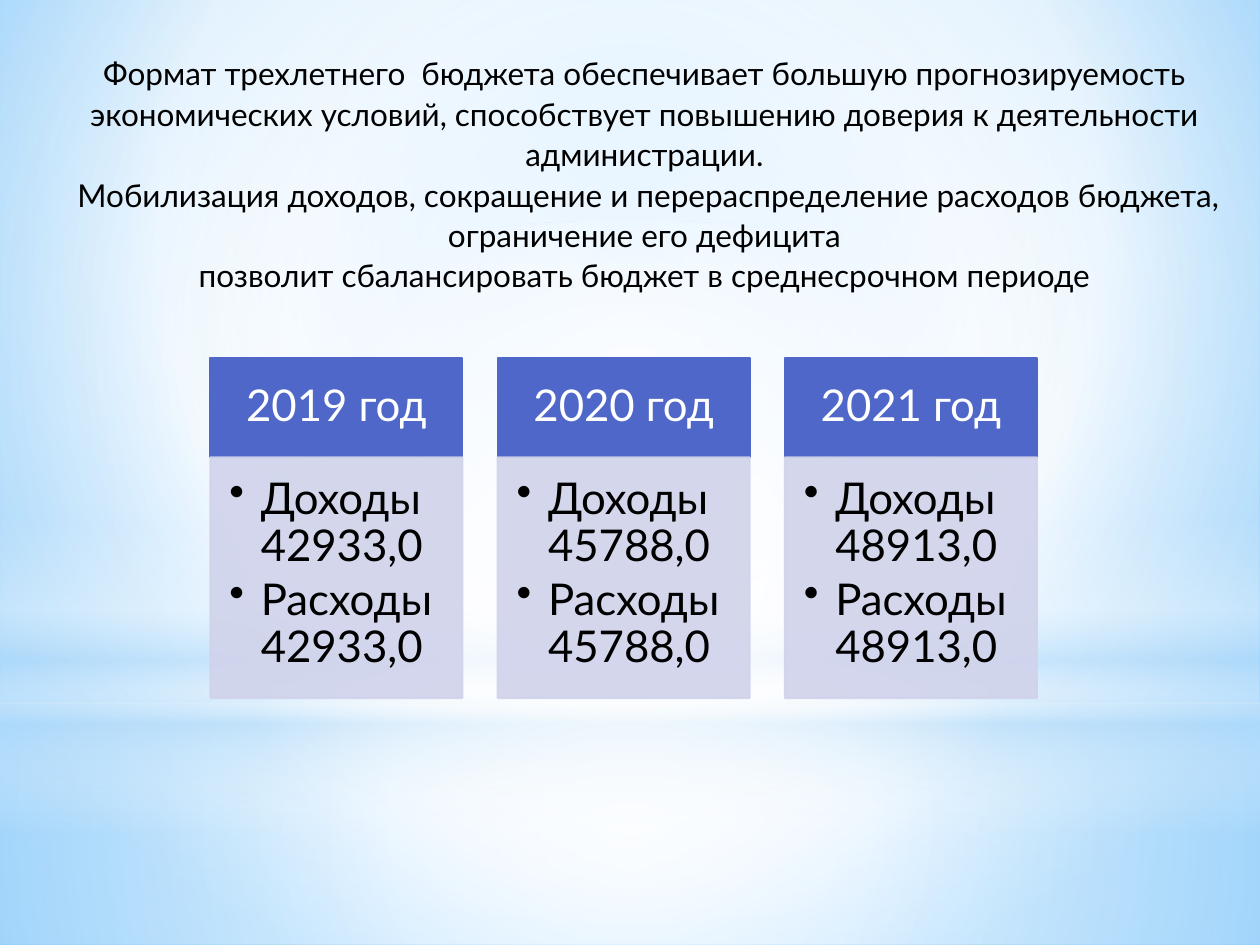
from pptx import Presentation
from pptx.dml.color import RGBColor
from pptx.enum.shapes import MSO_SHAPE
from pptx.enum.text import MSO_ANCHOR, MSO_AUTO_SIZE, PP_ALIGN
from pptx.oxml import parse_xml
from pptx.oxml.ns import nsdecls
from pptx.util import Inches, Pt

INTRO = [
    "Формат трехлетнего  бюджета обеспечивает большую прогнозируемость экономических "
    "условий, способствует повышению доверия к деятельности администрации.",
    " Мобилизация доходов, сокращение и перераспределение расходов бюджета, "
    "ограничение его дефицита",
    "позволит сбалансировать бюджет в среднесрочном периоде",
]
YEARS = [
    ("2019 год", ["Доходы 42933,0", "Расходы 42933,0"]),
    ("2020 год", ["Доходы 45788,0", "Расходы 45788,0"]),
    ("2021 год", ["Доходы 48913,0", "Расходы 48913,0"]),
]

COLORS = {"head": "4E67C8", "body": "D0D3EB", "white": "FFFFFF", "black": "000000",
          "pale": "B4DCFA", "sky": "9ED5FF", "deep": "5BB9FF"}
FONT = "Lato"

# Gradient stops: position %, colour, opacity %
SKY = [(0, "sky", 100), (60, "white", 100), (100, "deep", 100)]
MID = (50, 50, 50, 50)
GLOWS = [  # preset, box, stops, centre (None: a vertical linear gradient)
    (MSO_SHAPE.RECTANGLE, (0, 5.58, 10, 1.92),
     [(0, "white", 91), (37, "white", 76), (100, "pale", 79)], MID),
    (MSO_SHAPE.RECTANGLE, (0, 0, 10, 5.58),
     [(0, "white", 89), (48, "white", 62), (100, "pale", 79)], MID),
    (MSO_SHAPE.RECTANGLE, (0, 4.12, 10, 2.5),
     [(0, "white", 0), (29, "white", 30), (45, "pale", 40),
      (55, "white", 26), (65, "pale", 60), (100, "white", 0)], None),
    (MSO_SHAPE.OVAL, (0, 1.75, 10, 5.58), [(0, "white", 100), (56, "white", 0)], MID),
]

LEFT, TOP, WIDTH, STEP = 1.67, 2.84, 2, 2.28
HEAD_H, BODY_H = 0.79, 1.91
HEAD = {"size": 25, "color": "white", "align": PP_ALIGN.CENTER, "line": 0.9, "after": 8.75}
BODY = {"size": 25, "color": "black", "align": PP_ALIGN.LEFT, "line": 0.9, "after": 3.75}
LEAD = {"size": 18, "color": "black", "align": PP_ALIGN.CENTER, "line": 1.07, "after": 0}


def rgb(name):
    return RGBColor.from_string(COLORS[name])


def blend(old, stops, mid):
    """Replace a fill element with a gradient."""
    marks = "".join(
        f'<a:gs pos="{pos * 1000}"><a:srgbClr val="{COLORS[name]}">'
        f'<a:alpha val="{alpha * 1000}"/></a:srgbClr></a:gs>'
        for pos, name, alpha in stops)
    if mid:
        sides = " ".join(f'{side}="{val * 1000}"' for side, val in zip("ltrb", mid))
        way = f'<a:path path="circle"><a:fillToRect {sides}/></a:path>'
    else:
        way = '<a:lin ang="5400000" scaled="0"/>'
    new = parse_xml(f'<a:gradFill {nsdecls("a")} rotWithShape="1">'
                    f'<a:gsLst>{marks}</a:gsLst>{way}</a:gradFill>')
    old.getparent().replace(old, new)


def add_box(slide, kind, box):
    shape = slide.shapes.add_shape(kind, *map(Inches, box))
    shape.shadow.inherit = False
    return shape


def write(frame, lines, style, insets, anchor, bullet=False):
    frame.word_wrap = True
    frame.vertical_anchor = anchor
    for side, gap in zip(("left", "top", "right", "bottom"), insets):
        setattr(frame, f"margin_{side}", Inches(gap))
    for i, line in enumerate(lines):
        para = frame.paragraphs[0] if i == 0 else frame.add_paragraph()
        form = {"alignment": style["align"], "line_spacing": style["line"],
                "space_before": Pt(0), "space_after": Pt(style["after"])}
        for key, val in form.items():
            setattr(para, key, val)
        run = para.add_run()
        run.text = line
        for key, val in {"name": FONT, "size": Pt(style["size"]), "bold": False}.items():
            setattr(run.font, key, val)
        run.font.color.rgb = rgb(style["color"])
        if bullet:
            para.level = 1
            props = para._p.get_or_add_pPr()
            props.set("marL", str(Inches(0.25)))
            props.set("indent", str(-Inches(0.25)))
            props.append(parse_xml(f'<a:buChar {nsdecls("a")} char="•"/>'))


def add_panel(slide, box, name, alpha=100):
    shape = add_box(slide, MSO_SHAPE.RECTANGLE, box)
    shape.fill.solid()
    shape.line.width = Pt(1.25)
    for fill in (shape.fill, shape.line.fill):
        fill.solid()
        fill.fore_color.rgb = rgb(name)
    if alpha < 100:
        for color in shape._element.xpath("./p:spPr//a:srgbClr"):
            color.append(parse_xml(f'<a:alpha {nsdecls("a")} val="{alpha * 1000}"/>'))
    return shape.text_frame


def main():
    deck = Presentation()
    deck.slide_width, deck.slide_height = Inches(10), Inches(7.5)
    slide = deck.slides.add_slide(deck.slide_layouts[5])

    slide.background.fill.solid()
    blend(slide.element.xpath(".//p:bgPr/a:solidFill")[0], SKY, (20, 10, 20, 60))
    title = slide.shapes.title
    for kind, box, stops, mid in GLOWS:
        glow = add_box(slide, kind, box)
        glow.fill.background()
        glow.line.fill.background()
        blend(glow._element.xpath("./p:spPr/a:noFill")[0], stops, mid)
        title._element.addprevious(glow._element)

    place = {"left": 0.43, "top": 0.36, "width": 9.37, "height": 2.05}
    for key, val in place.items():
        setattr(title, key, Inches(val))
    write(title.text_frame, INTRO, LEAD, (0.1, 0.05, 0.1, 0.05), MSO_ANCHOR.TOP)
    title.text_frame.auto_size = MSO_AUTO_SIZE.SHAPE_TO_FIT_TEXT
    title.text_frame.paragraphs[-1].space_after = Pt(8)

    for i, (year, sums) in enumerate(YEARS):
        left = LEFT + i * STEP
        head = add_panel(slide, (left, TOP, WIDTH, HEAD_H), "head")
        write(head, [year], HEAD, (0.19, 0.11, 0.19, 0.11), MSO_ANCHOR.MIDDLE)
        body = add_panel(slide, (left, TOP + HEAD_H, WIDTH, BODY_H), "body", 90)
        write(body, sums, BODY, (0.15, 0.15, 0.19, 0.22), MSO_ANCHOR.TOP, bullet=True)

    deck.save("out.pptx")


if __name__ == "__main__":
    main()
